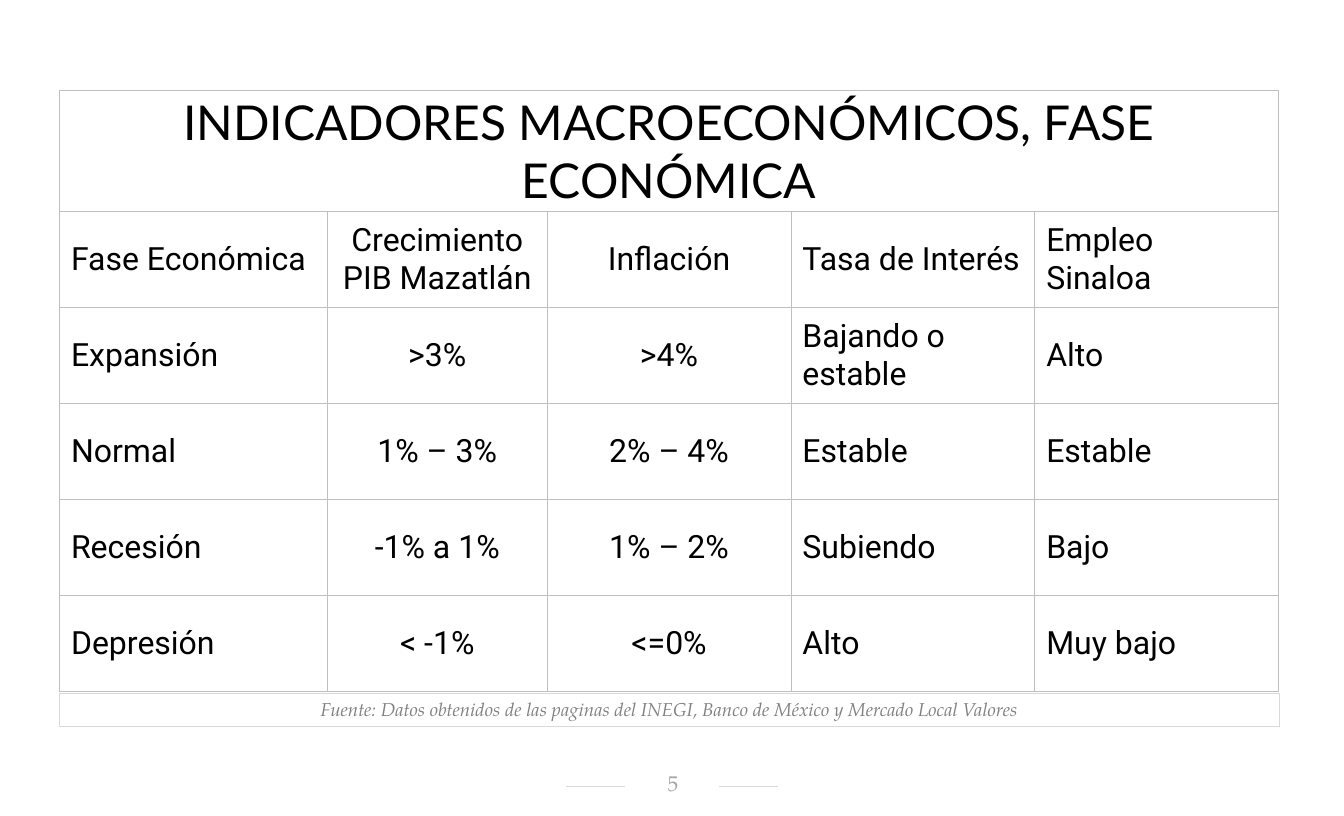
from lxml.etree import SubElement
from pptx import Presentation
from pptx.dml.color import RGBColor as RGB
from pptx.enum.shapes import MSO_CONNECTOR as Connector, MSO_SHAPE as Preset
from pptx.enum.text import MSO_ANCHOR as Anchor, PP_ALIGN as Align
from pptx.oxml.ns import qn
from pptx.util import Inches, Pt

HEADING = "INDICADORES MACROECONÓMICOS, FASE ECONÓMICA"
PHASES = [
    ("Fase Económica", "Crecimiento PIB Mazatlán", "Inflación", "Tasa de Interés", "Empleo\nSinaloa"),
    ("Expansión", ">3%", ">4%", "Bajando o estable", "Alto"),
    ("Normal", "1% – 3%", "2% – 4%", "Estable", "Estable"),
    ("Recesión", "-1% a 1%", "1% – 2%", "Subiendo", "Bajo"),
    ("Depresión", "< -1%", "<=0%", "Alto", "Muy bajo"),
]
CREDIT = "Fuente: Datos obtenidos de las paginas del INEGI, Banco de México y Mercado Local Valores"
PAGE = "5"

THEME = {
    "heading": {"name": "Lato", "size": Pt(36), "color": "000000"},
    "body": {"name": "Roboto", "size": Pt(24), "color": "000000"},
    "credit": {"name": "TeX Gyre Pagella", "size": Pt(14), "color": "808080", "italic": True},
    "page": {"name": "TeX Gyre Pagella", "size": Pt(16), "color": "A6A6A6"},
    "grid": ("BFBFBF", Pt(0.5)),
    "rule": ("D9D9D9", Pt(0.5)),
    "frame": ("D9D9D9", Pt(0.75)),
}

LEFT, TOP, WIDTH = 0.62, 0.94, 12.71
COLUMN_WIDTHS = [2.79, 2.29, 2.54, 2.54, 2.54]
ROW_HEIGHTS = [1.26] + [1.0] * len(PHASES)
COLUMN_ALIGNS = [Align.LEFT, Align.CENTER, Align.CENTER, Align.LEFT, Align.LEFT]
CREDIT_TOP, CREDIT_HEIGHT = 7.22, 0.35
PAGE_BOX = (6.51, 8.04, 0.98, 0.26)
RULE_Y, RULE_LENGTH = 8.19, 0.61
RULE_STARTS = [5.9, 7.49]
HEADING_MARGINS = (0.12, 0.03, 0.12, 0.03)
BODY_MARGINS = (0.12, 0.01, 0.12, 0)
PAGE_MARGINS = (0.12, 0.02, 0.1, 0.05)


def set_margins(holder, margins):
    for side, margin in zip(("left", "top", "right", "bottom"), margins):
        setattr(holder, f"margin_{side}", Inches(margin))


def write(frame, wording, style, align):
    frame.text = wording
    frame.word_wrap = True
    for paragraph in frame.paragraphs:
        paragraph.alignment = align
        for run in paragraph.runs:
            for key, setting in THEME[style].items():
                if key == "color":
                    run.font.color.rgb = RGB.from_string(setting)
                else:
                    setattr(run.font, key, setting)


def stroke(line, style):
    color, line.width = THEME[style]
    line.color.rgb = RGB.from_string(color)


def fill_cell(cell, wording, style, align, margins):
    write(cell.text_frame, wording, style, align)
    cell.vertical_anchor = Anchor.MIDDLE
    set_margins(cell, margins)


def draw_borders(cell):
    color, width = THEME["grid"]
    properties = cell._tc.get_or_add_tcPr()
    for edge in "LRTB":
        border = SubElement(properties, qn(f"a:ln{edge}"), w=str(int(width)))
        SubElement(SubElement(border, qn("a:solidFill")), qn("a:srgbClr"), val=color)
    cell.fill.background()


def add_indicators(slide):
    indicators = slide.shapes.add_table(
        len(ROW_HEIGHTS), len(COLUMN_WIDTHS),
        Inches(LEFT), Inches(TOP), Inches(WIDTH), Inches(sum(ROW_HEIGHTS)),
    ).table
    indicators.first_row = indicators.horz_banding = False
    for column, width in zip(indicators.columns, COLUMN_WIDTHS):
        column.width = Inches(width)
    for row, height in zip(indicators.rows, ROW_HEIGHTS):
        row.height = Inches(height)
        for cell in row.cells:
            draw_borders(cell)
    heading = indicators.cell(0, 0)
    heading.merge(indicators.cell(0, len(COLUMN_WIDTHS) - 1))
    fill_cell(heading, HEADING, "heading", Align.CENTER, HEADING_MARGINS)
    for r, phase in enumerate(PHASES, 1):
        for c, (wording, align) in enumerate(zip(phase, COLUMN_ALIGNS)):
            fill_cell(indicators.cell(r, c), wording, "body", align, BODY_MARGINS)


def add_credit(slide):
    credit = slide.shapes.add_shape(
        Preset.RECTANGLE, Inches(LEFT), Inches(CREDIT_TOP), Inches(WIDTH), Inches(CREDIT_HEIGHT))
    credit.shadow.inherit = False
    credit.fill.background()
    stroke(credit.line, "frame")
    write(credit.text_frame, CREDIT, "credit", Align.CENTER)
    credit.text_frame.vertical_anchor = Anchor.TOP


def add_page_number(slide):
    for start in RULE_STARTS:
        rule = slide.shapes.add_connector(
            Connector.STRAIGHT, Inches(start), Inches(RULE_Y),
            Inches(start + RULE_LENGTH), Inches(RULE_Y))
        stroke(rule.line, "rule")
        SubElement(rule._element.spPr, qn("a:effectLst"))
    page = slide.shapes.add_textbox(*map(Inches, PAGE_BOX)).text_frame
    write(page, PAGE, "page", Align.CENTER)
    page.vertical_anchor = Anchor.MIDDLE
    set_margins(page, PAGE_MARGINS)


def main():
    deck = Presentation()
    deck.slide_width, deck.slide_height = Inches(14), Inches(8.5)
    slide = deck.slides.add_slide(deck.slide_layouts[6])
    add_page_number(slide)
    add_credit(slide)
    add_indicators(slide)
    deck.save("out.pptx")


if __name__ == "__main__":
    main()
